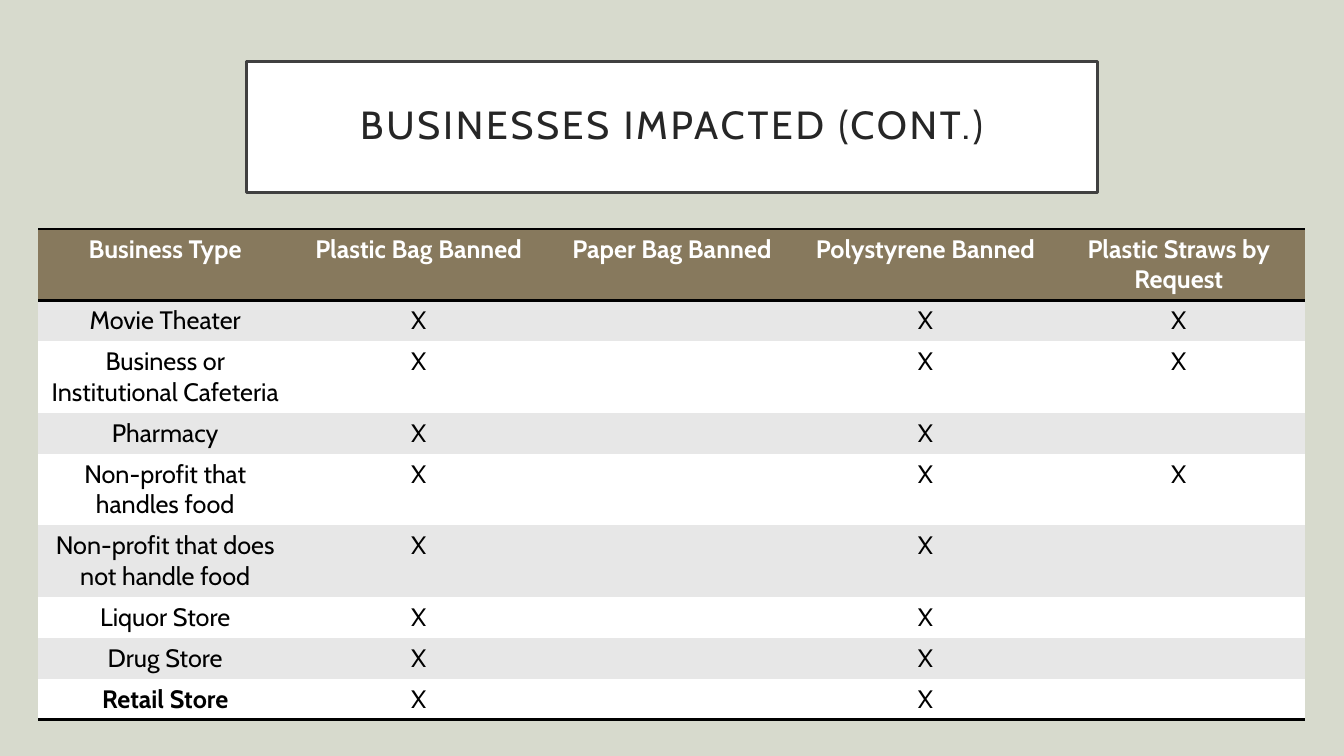
"""Build the slide on businesses affected by the plastic bans."""
from lxml import etree
from pptx import Presentation
from pptx import util as u
from pptx.dml.color import RGBColor
from pptx.enum import shapes, text
from pptx.oxml import ns

COLORS = {
    "page": "D7DACD", "header": "87795D", "band": "E7E7E7", "white": "FFFFFF",
    "black": "000000", "frame": "404040", "title": "262626",
}
HEADERS = ["Business Type", "Plastic Bag Banned", "Paper Bag Banned",
           "Polystyrene Banned", "Plastic Straws by Request"]
NO_STRAWS = ["X", "", "X", ""]
WITH_STRAWS = ["X", "", "X", "X"]
BUSINESSES = [
    ("Movie Theater", WITH_STRAWS),
    ("Business or Institutional Cafeteria", WITH_STRAWS),
    ("Pharmacy", NO_STRAWS),
    ("Non-profit that handles food", WITH_STRAWS),
    ("Non-profit that does not handle food", NO_STRAWS),
    ("Liquor Store", NO_STRAWS),
    ("Drug Store", NO_STRAWS),
    ("Retail Store", NO_STRAWS),
]
PLAIN_STYLE = "{2D5ABB26-0587-4C30-8999-92F81FD0307C}"


class Painter:
    """Holds the style and the current slide."""

    def __init__(self, page, font):
        self.page = page
        self.font = font

    def color(self, name):
        return RGBColor.from_string(COLORS[name])

    def fill(self, item, name):
        item.fill.solid()
        item.fill.fore_color.rgb = self.color(name)

    def label(self, frame, words, color, **formats):
        para = frame.paragraphs[0]
        para.alignment = text.PP_ALIGN.CENTER
        if not words:
            return para
        span = para.add_run()
        span.text = words
        span.font.color.rgb = self.color(color)
        for key, value in {"name": self.font, **formats}.items():
            setattr(span.font, key, value)
        return para

    def border(self, cell, sides):
        properties = cell._tc.get_or_add_tcPr()
        for index, side in enumerate(sides):
            line = etree.Element(ns.qn(f"a:ln{side}"), w=str(u.Pt(2)))
            solid = etree.SubElement(line, ns.qn("a:solidFill"))
            etree.SubElement(solid, ns.qn("a:srgbClr"), val=COLORS["black"])
            properties.insert(index, line)

    def table(self, rows, left, top, column_width, row_height):
        count = len(rows[0])
        frame = self.page.shapes.add_table(
            len(rows), count, u.Pt(left), u.Pt(top),
            u.Pt(column_width * count), u.Pt(row_height * len(rows)))
        table = frame.table
        table._tbl.tblPr.find(ns.qn("a:tableStyleId")).text = PLAIN_STYLE
        last = len(rows) - 1
        for row, values in enumerate(rows):
            table.rows[row].height = u.Pt(row_height)
            fill = "header" if row == 0 else "band" if row % 2 else "white"
            sides = {0: "TB", last: "B"}.get(row, "")
            for column, words in enumerate(values):
                cell = table.cell(row, column)
                self.fill(cell, fill)
                self.border(cell, sides)
                self.label(cell.text_frame, words,
                           "black" if row else "white", size=u.Pt(18),
                           bold=row == 0 or (row == last and column == 0))
        for column in table.columns:
            column.width = u.Pt(column_width)

    def title(self, words, left, top, width, height):
        box = self.page.shapes.add_shape(
            shapes.MSO_SHAPE.RECTANGLE,
            u.Pt(left), u.Pt(top), u.Pt(width), u.Pt(height))
        box.shadow.inherit = False
        self.fill(box, "white")
        box.line.color.rgb = self.color("frame")
        box.line.width = u.Pt(2.5)
        frame = box.text_frame
        inset = u.Pt(14.4)
        formats = {"word_wrap": True, "vertical_anchor": text.MSO_ANCHOR.MIDDLE,
                   "margin_left": inset, "margin_right": inset,
                   "margin_top": inset, "margin_bottom": inset}
        for key, value in formats.items():
            setattr(frame, key, value)
        para = self.label(frame, words, "title", size=u.Pt(28))
        para.line_spacing = 0.9
        para.runs[0].font._element.set("spc", "200")


def main():
    deck = Presentation()
    deck.slide_width, deck.slide_height = u.Pt(960), u.Pt(540)
    page = deck.slides.add_slide(deck.slide_layouts[6])
    painter = Painter(page, "Cabin")
    painter.fill(page.background, "page")
    rows = [HEADERS] + [[name, *marks] for name, marks in BUSINESSES]
    painter.table(rows, left=27.5, top=163.4, column_width=181, row_height=29.2)
    painter.title("BUSINESSES IMPACTED (CONT.)",
                  left=176, top=43.9, width=608, height=93.6)
    deck.save("out.pptx")


if __name__ == "__main__":
    main()
